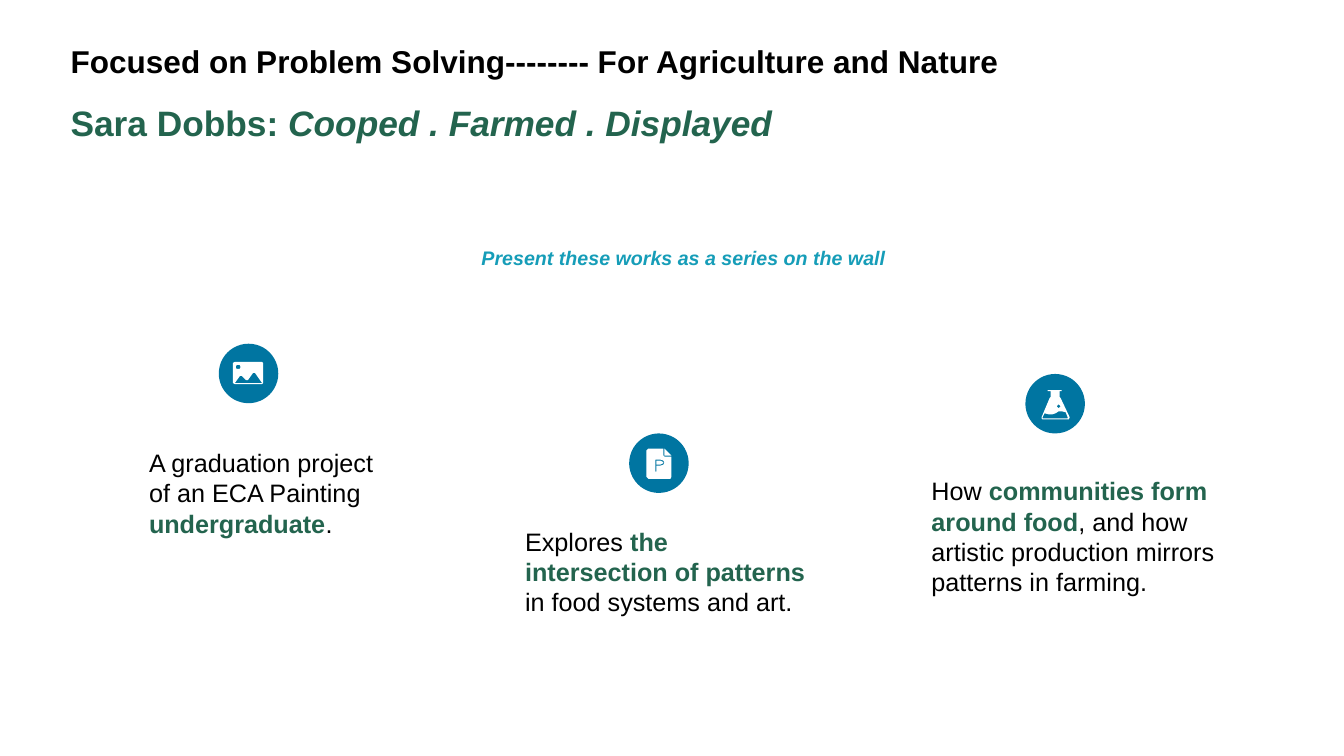
import math
from pptx import Presentation
from pptx.dml.color import RGBColor
from pptx.enum.shapes import MSO_SHAPE
from pptx.enum.text import MSO_ANCHOR, MSO_AUTO_SIZE, PP_ALIGN
from pptx.util import Inches, Pt

ROUNDED = MSO_SHAPE.ROUNDED_RECTANGLE
BADGE_SIZE = 0.59
COLORS = {name: RGBColor.from_string(value) for name, value in {
    "black": "000000", "white": "FFFFFF", "green": "23644E",
    "teal": "169DB8", "badge": "0075A1"}.items()}


def dot(x, y, radius):
    """Return the points of a small round contour."""
    angles = [math.tau * step / 16 for step in range(16)]
    return [(x + radius * math.cos(a), y + radius * math.sin(a)) for a in angles]


def add_runs(paragraph, pieces):
    """Add (text, emphasised) pieces; emphasised ones are bold green."""
    for text, emphasised in pieces:
        run = paragraph.add_run()
        run.text = text
        if emphasised:
            run.font.bold = True
            run.font.color.rgb = COLORS["green"]


# Icon contours in hundredths of an inch from the badge corner;
# a contour inside another one cuts a hole.
PAINTING_ICON = [
    [(16, 18), (43, 18), (44, 19), (44, 39), (43, 40), (16, 40), (14, 39), (14, 19)],
    [(36, 29), (34, 29), (29, 36), (27, 36), (23, 32), (21, 32), (16, 39), (43, 39)],
    dot(19.3, 23, 2.2),
]
PAPER_ICON = [
    [(19, 15), (34, 15), (34, 22), (35, 23), (42, 23), (42, 43), (41, 45),
     (19, 45), (17, 43), (17, 17)],
    [(26, 26), (31, 26), (34, 27), (35, 29), (34, 31), (31, 32), (27, 32),
     (27, 38), (26, 38)],
    [(27, 27), (31, 27), (33, 28), (34, 29), (33, 30), (31, 31), (27, 31)],
    [(35, 15), (42, 22), (35, 22)],
]
FLASK_ICON = [
    [(16, 43), (24, 24), (25, 23), (25, 17), (22, 17), (22, 16), (36, 16), (36, 17),
     (34, 17), (34, 23), (35, 24), (44, 43), (43, 45), (17, 45), (16, 44)],
    [(30, 39), (27, 40), (23, 40), (19, 39), (17, 43), (17, 44), (42, 44), (42, 43),
     (40, 38), (36, 37), (33, 37)],
    dot(33, 32, 1.6),
]

# Badge corner, icon, text box, text pieces
POINTS = [
    ((2.17, 3.41), PAINTING_ICON, (1.38, 4.39, 2.46, 1.01),
     [("A graduation project of an ECA Painting ", False),
      ("undergraduate", True), (".", False)]),
    ((6.24, 4.3), PAPER_ICON, (5.11, 5.17, 3.1, 1.01),
     [("Explores ", False), ("the intersection of patterns ", True),
      ("in food systems and art.", False)]),
    ((10.17, 3.71), FLASK_ICON, (9.14, 4.67, 3.1, 1.31),
     [("How ", False), ("communities form around food", True),
      (", and how artistic production mirrors patterns in farming.", False)]),
]

prs = Presentation()
prs.slide_width, prs.slide_height = Inches(13.33), Inches(7.5)
slide = prs.slides.add_slide(prs.slide_layouts[5])
shapes = slide.shapes

# Title
title = shapes.title
title.left, title.top = Inches(0.6), Inches(0.35)
title.width, title.height = Inches(11.88), Inches(1.12)
title_frame = title.text_frame
title_frame.word_wrap = True
title_frame.auto_size = MSO_AUTO_SIZE.NONE
title_frame.vertical_anchor = MSO_ANCHOR.BOTTOM
heading = title_frame.paragraphs[0]
heading.alignment = PP_ALIGN.LEFT
heading.line_spacing = 1.5
heading.font.name = "Arial"
heading.font.size = Pt(22.5)
heading.font.bold = True
heading.font.color.rgb = COLORS["black"]
add_runs(heading, [("Focused on Problem Solving-------- For Agriculture and Nature", False)])
heading.add_line_break()
add_runs(heading, [("Sara Dobbs: ", True), ("Cooped . Farmed . Displayed", True)])
artist, work = heading.runs[1:]
artist.font.size = work.font.size = Pt(25.2)
work.font.italic = True

# Display note
note_frame = shapes.add_textbox(
    Inches(0.84), Inches(2.34), Inches(11.88), Inches(0.36)).text_frame
note_frame.word_wrap = True
note = note_frame.paragraphs[0]
note.text = "Present these works as a series on the wall"
note.alignment = PP_ALIGN.CENTER
note.line_spacing = 1.2
note.font.name = "Arial"
note.font.size = Pt(14)
note.font.bold = note.font.italic = True
note.font.color.rgb = COLORS["teal"]

# Three points, each with a badge, an icon and a text
for (left, top), contours, text_area, pieces in POINTS:
    badge = shapes.add_shape(ROUNDED, Inches(left), Inches(top),
                             Inches(BADGE_SIZE), Inches(BADGE_SIZE))
    badge.adjustments[0] = 0.5

    builder = shapes.build_freeform(*contours[0][0], scale=Inches(0.01))
    builder.add_line_segments(contours[0][1:], close=True)
    for contour in contours[1:]:
        builder.move_to(*contour[0])
        builder.add_line_segments(contour[1:], close=True)
    icon = builder.convert_to_shape(Inches(left), Inches(top))

    for part, color in ((badge, "badge"), (icon, "white")):
        part.shadow.inherit = False
        part.fill.solid()
        part.fill.fore_color.rgb = COLORS[color]
        part.line.fill.background()

    point_frame = shapes.add_textbox(*map(Inches, text_area)).text_frame
    point_frame.word_wrap = True
    point = point_frame.paragraphs[0]
    point.font.name = "Arial"
    point.font.size = Pt(18)
    point.font.color.rgb = COLORS["black"]
    add_runs(point, pieces)

prs.save("out.pptx")
